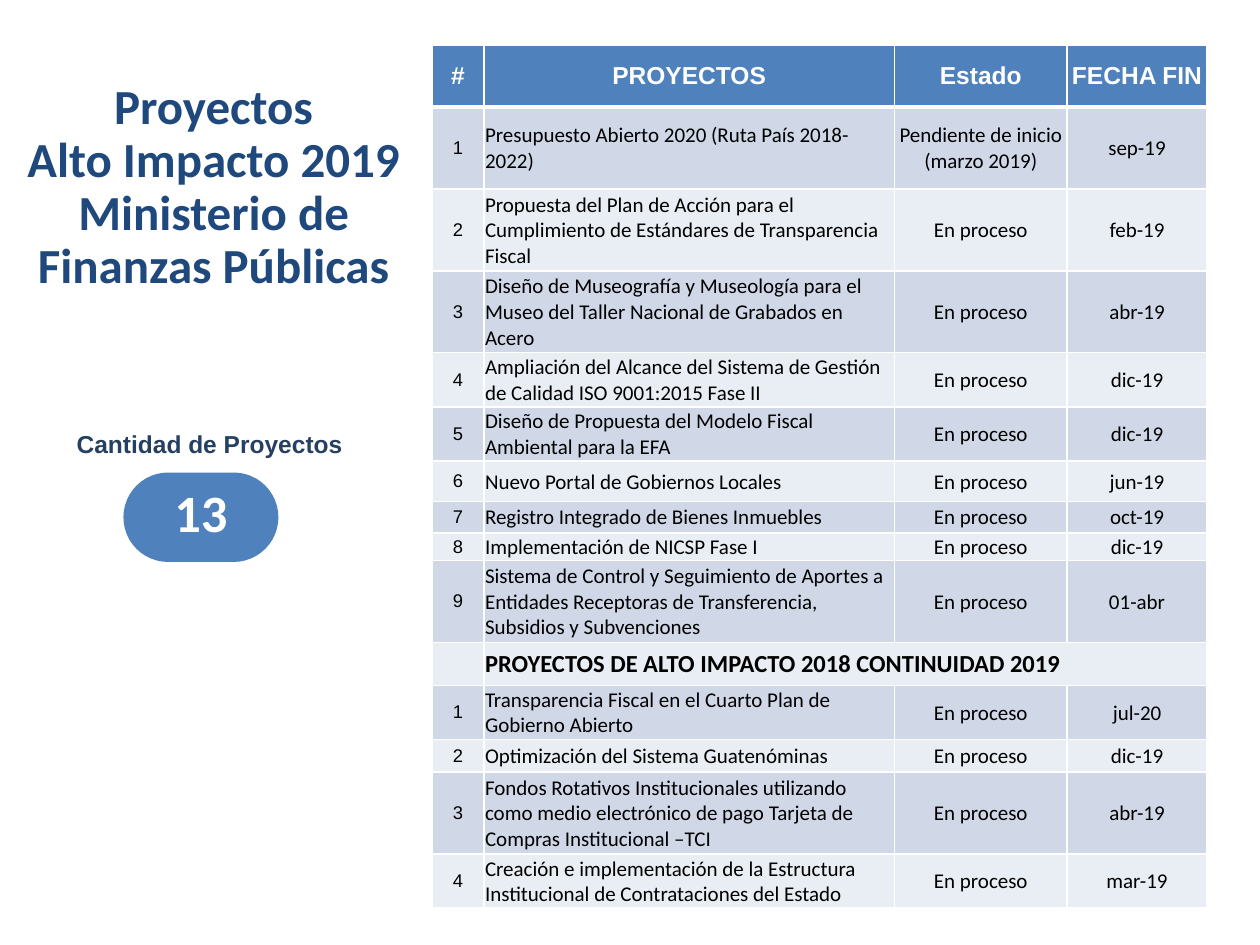
import pptx
import pptx.util
import pptx.dml.color
import pptx.enum.shapes
import pptx.enum.text
import pptx.oxml.ns
from lxml import etree

Inches = pptx.util.Inches
ALIGN = pptx.enum.text.PP_ALIGN
ANCHOR = pptx.enum.text.MSO_ANCHOR
BLUE, DARK, LIGHT = "4F81BD", "D0D8E8", "E9EDF4"

HEAD = ("#", "PROYECTOS", "Estado", "FECHA FIN")
BUSY = "En proceso"
SECTION = "PROYECTOS DE ALTO IMPACTO 2018 CONTINUIDAD 2019"
WIDTHS = (0.41, 3.26, 1.37, 1.11)

# Row height, project, state, end date
NEW = [
    (0.65, "Presupuesto Abierto 2020 (Ruta País 2018-2022)",
     "Pendiente de inicio (marzo 2019)", "sep-19"),
    (0.65, "Propuesta del Plan de Acción para el Cumplimiento de Estándares de Transparencia Fiscal",
     BUSY, "feb-19"),
    (0.65, "Diseño de Museografía y Museología para el Museo del Taller Nacional de Grabados en Acero",
     BUSY, "abr-19"),
    (0.43, "Ampliación del Alcance del Sistema de Gestión de Calidad ISO 9001:2015 Fase II",
     BUSY, "dic-19"),
    (0.43, "Diseño de Propuesta del Modelo Fiscal Ambiental para la EFA", BUSY, "dic-19"),
    (0.32, "Nuevo Portal de Gobiernos Locales", BUSY, "jun-19"),
    (0.25, "Registro Integrado de Bienes Inmuebles", BUSY, "oct-19"),
    (0.22, "Implementación de NICSP Fase I", BUSY, "dic-19"),
    (0.65, "Sistema de Control y Seguimiento de Aportes a Entidades Receptoras de Transferencia, "
           "Subsidios y Subvenciones", BUSY, "01-abr"),
]
OLD = [
    (0.43, "Transparencia Fiscal en el Cuarto Plan de Gobierno Abierto", BUSY, "jul-20"),
    (0.26, "Optimización del Sistema Guatenóminas", BUSY, "dic-19"),
    (0.65, "Fondos Rotativos Institucionales utilizando como medio electrónico de pago "
           "Tarjeta de Compras Institucional –TCI", BUSY, "abr-19"),
    (0.43, "Creación e implementación de la Estructura Institucional de Contrataciones del Estado",
     BUSY, "mar-19"),
]


def rgb(code):
    return pptx.dml.color.RGBColor.from_string(code)


def style(frame, size, font, color, bold=False, align=ALIGN.CENTER):
    for para in frame.paragraphs:
        para.alignment = align
        for run in para.runs:
            run.font.size = pptx.util.Pt(size)
            run.font.name = font
            run.font.bold = bold
            run.font.color.rgb = rgb(color)


def border(cell, top, bottom):
    """White cell edges; top and bottom widths in points."""
    qn = pptx.oxml.ns.qn
    props = cell._tc.get_or_add_tcPr()
    for side, width in (("L", 1), ("R", 1), ("T", top), ("B", bottom)):
        line = etree.SubElement(props, qn("a:ln" + side), w=str(pptx.util.Pt(width)))
        fill = etree.SubElement(line, qn("a:solidFill"))
        etree.SubElement(fill, qn("a:srgbClr"), val="FFFFFF")


def fill_cell(cell, row, col, text):
    head = row == 0
    wide = head or col == 0
    cell.text = text
    cell.vertical_anchor = ANCHOR.MIDDLE
    cell.margin_left = cell.margin_right = Inches(0.03 if wide else 0.01)
    cell.margin_top = Inches(0 if wide else 0.01)
    cell.margin_bottom = 0
    border(cell, 3 if row == 1 else 1, 3 if head else 1)
    cell.fill.solid()
    cell.fill.fore_color.rgb = rgb(BLUE if head else DARK if row % 2 else LIGHT)
    if head:
        style(cell.text_frame, 14, "Arial", "FFFFFF", True)
    elif col == 0:
        style(cell.text_frame, 10.5, "Arial", "000000")
    elif text == SECTION:
        style(cell.text_frame, 14, "Calibri", "000000", True, ALIGN.LEFT)
    else:
        style(cell.text_frame, 12, "Calibri", "000000",
              align=ALIGN.LEFT if col == 1 else ALIGN.CENTER)


def number(items):
    return [(high, str(i), *rest) for i, (high, *rest) in enumerate(items, 1)]


def add_grid(slide):
    rows = [(0.49, *HEAD), *number(NEW), (0.34, "", SECTION, "", ""), *number(OLD)]
    high = sum(row[0] for row in rows)
    grid = slide.shapes.add_table(len(rows), len(WIDTHS), Inches(3.43), Inches(0.36),
                                  Inches(sum(WIDTHS)), Inches(high)).table
    for col, width in zip(grid.columns, WIDTHS):
        col.width = Inches(width)
    for r, (high, *texts) in enumerate(rows):
        grid.rows[r].height = Inches(high)
        for c, text in enumerate(texts):
            fill_cell(grid.cell(r, c), r, c, text)
        if SECTION in texts:
            grid.cell(r, 1).merge(grid.cell(r, 3))


def add_pill(slide, text, *box):
    kind = pptx.enum.shapes.MSO_SHAPE.ROUNDED_RECTANGLE
    pill = slide.shapes.add_shape(kind, *map(Inches, box))
    pill.adjustments[0] = 0.5
    pill.shadow.inherit = False
    pill.fill.solid()
    pill.fill.fore_color.rgb = rgb(BLUE)
    pill.line.fill.background()
    pill.text_frame.text = text
    pill.text_frame.vertical_anchor = ANCHOR.BOTTOM
    style(pill.text_frame, 30, "Calibri", "FFFFFF", True)


def add_text(slide, text, *box):
    frame = slide.shapes.add_textbox(*map(Inches, box)).text_frame
    frame.word_wrap = True
    frame.text = text
    return frame


def main():
    deck = pptx.Presentation()
    deck.slide_width, deck.slide_height = Inches(10), Inches(7.5)
    slide = deck.slides.add_slide(deck.slide_layouts[6])

    # Project table
    add_grid(slide)

    # Project count
    add_pill(slide, "13", 0.98, 3.75, 1.23, 0.71)
    label = add_text(slide, "Cantidad de Proyectos", 0.51, 3.36, 2.4, 0.34)
    style(label, 14, "Arial", "254061", True, ALIGN.LEFT)

    # Title
    title = add_text(slide, "Proyectos\nAlto Impacto 2019\nMinisterio de Finanzas Públicas",
                     0.2, 0, 2.99, 2.99)
    title.margin_left = title.margin_right = title.margin_top = title.margin_bottom = 0
    title.vertical_anchor = ANCHOR.MIDDLE
    style(title, 28, "Calibri", "1F497D", True)
    for para in title.paragraphs:
        para.line_spacing = 0.9

    deck.save("out.pptx")


if __name__ == "__main__":
    main()
